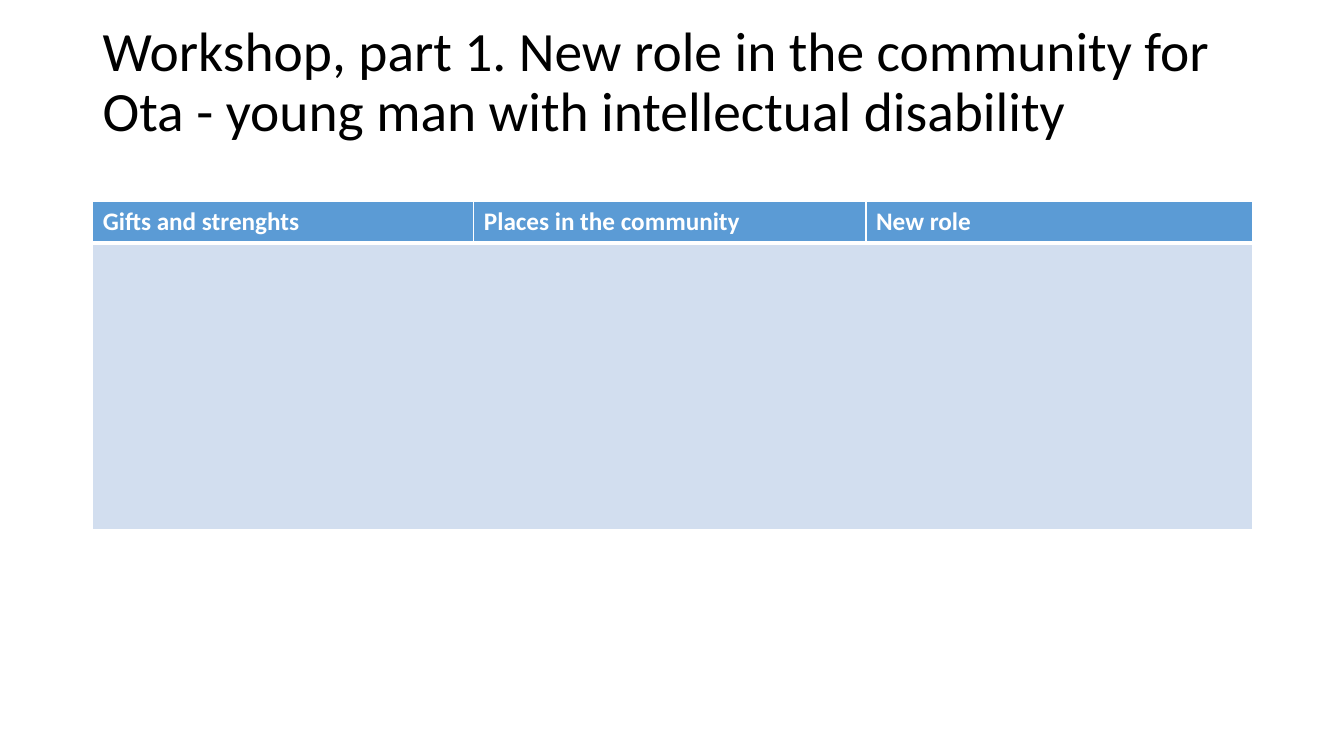
from lxml.etree import SubElement
from pptx import Presentation
from pptx.dml.color import RGBColor
from pptx.enum.text import MSO_ANCHOR
from pptx.oxml.ns import qn
from pptx.util import Inches, Pt

FONT = "Calibri"
WHITE = "FFFFFF"
HEADINGS = ["Gifts and strenghts", "Places in the community", "New role"]
COLUMN_WIDTHS = [3.78, 3.89, 3.83]
ROW_HEIGHTS = [0.41, 2.84]


def color(hex_value):
    return RGBColor.from_string(hex_value)


def style_font(font, size, hex_value, bold=False):
    font.name = FONT
    font.size = Pt(size)
    font.bold = bold
    font.color.rgb = color(hex_value)


def style_cell(cell, fill, bottom_width):
    # Borders come before the fill in the cell properties
    properties = cell._tc.get_or_add_tcPr()
    for side, width in (("L", 1), ("R", 1), ("T", 1), ("B", bottom_width)):
        border = SubElement(properties, qn(f"a:ln{side}"), w=str(Pt(width)))
        solid = SubElement(border, qn("a:solidFill"))
        SubElement(solid, qn("a:srgbClr"), val=WHITE)
    cell.fill.solid()
    cell.fill.fore_color.rgb = color(fill)


def add_title(slide, left, top, width, height):
    title = slide.shapes.add_textbox(
        Inches(left), Inches(top), Inches(width), Inches(height))
    frame = title.text_frame
    frame.word_wrap = True
    frame.vertical_anchor = MSO_ANCHOR.MIDDLE
    frame.margin_bottom = Inches(0.65)  # raises the two lines in the box
    frame.text = ("Workshop, part 1. New role in the community for "
                  "Ota - young man with intellectual disability")
    paragraph = frame.paragraphs[0]
    paragraph.line_spacing = 0.9
    style_font(paragraph.runs[0].font, 39.6, "000000")


def add_role_table(slide, left, top, width, height):
    roles = slide.shapes.add_table(
        len(ROW_HEIGHTS), len(HEADINGS),
        Inches(left), Inches(top), Inches(width), Inches(height)).table
    for column, column_width in zip(roles.columns, COLUMN_WIDTHS):
        column.width = Inches(column_width)
    for row, row_height in zip(roles.rows, ROW_HEIGHTS):
        row.height = Inches(row_height)

    # Header row
    for index, heading in enumerate(HEADINGS):
        cell = roles.cell(0, index)
        cell.text = heading
        style_font(cell.text_frame.paragraphs[0].runs[0].font, 18, WHITE, True)
        style_cell(cell, "5B9BD5", 3)

    # One open area across all columns
    answer_area = roles.cell(1, 0)
    answer_area.merge(roles.cell(1, len(HEADINGS) - 1))
    for index in range(len(HEADINGS)):
        style_cell(roles.cell(1, index), "D2DEEF", 1)
    # The top edge continues the thick line under the header
    for index in range(len(HEADINGS)):
        top_edge = roles.cell(1, index)._tc.tcPr.find(qn("a:lnT"))
        top_edge.set("w", str(Pt(3)))


def main():
    presentation = Presentation()
    presentation.slide_width = Inches(13.33)
    presentation.slide_height = Inches(7.5)
    slide = presentation.slides.add_slide(presentation.slide_layouts[6])
    add_title(slide, 0.92, 0.4, 11.5, 1.45)
    add_role_table(slide, 0.92, 2, sum(COLUMN_WIDTHS), sum(ROW_HEIGHTS))
    presentation.save("out.pptx")


if __name__ == "__main__":
    main()
